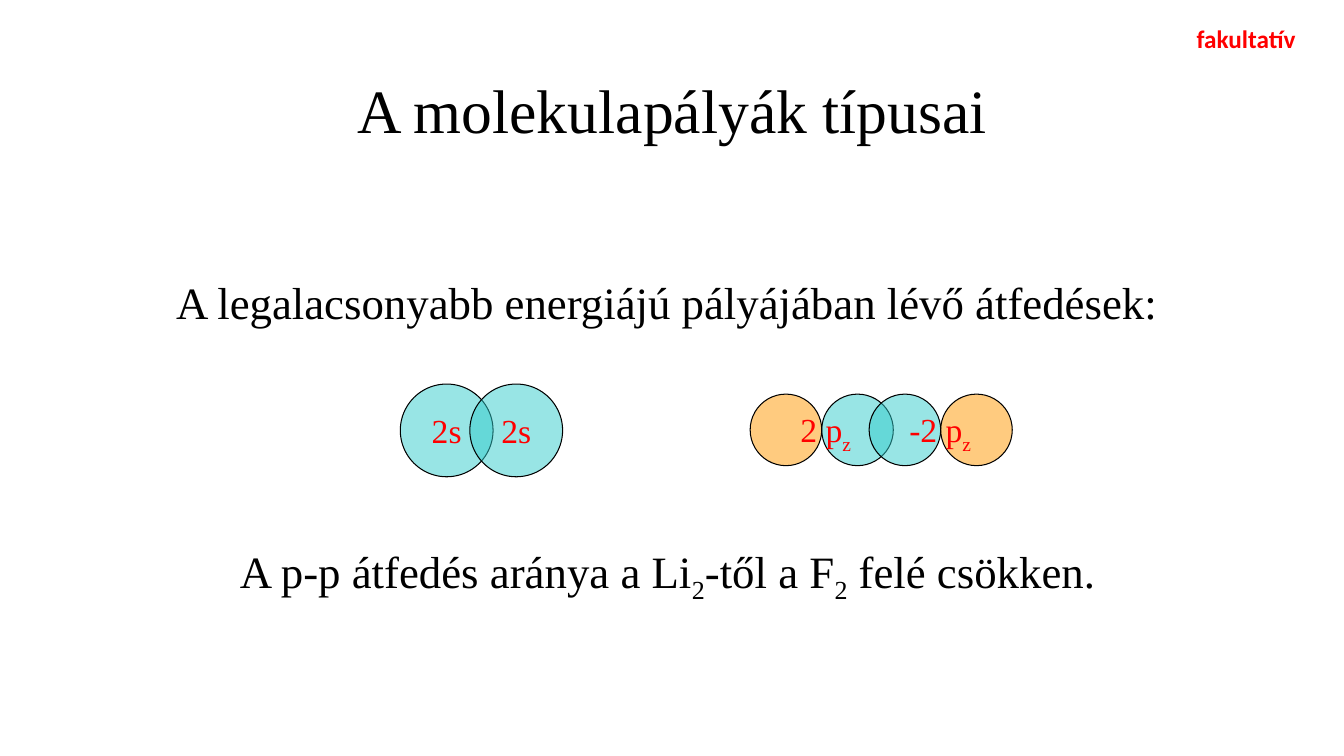
from lxml import etree
from pptx import Presentation
from pptx.dml.color import RGBColor
from pptx.enum.shapes import MSO_SHAPE as Shape
from pptx.enum.text import MSO_ANCHOR as Anchor, PP_ALIGN as Align
from pptx.oxml.ns import qn
from pptx.util import Inches, Pt

COLORS = {"text": "000000", "accent": "FF0000", "plus": "33CCCC", "minus": "FF9900"}
SERIF = "Times New Roman"
S_DIAMETER, S_STEP = 0.92, 0.69
P_DIAMETER, P_STEP = 0.71, 0.47


def color(name):
    return RGBColor.from_string(COLORS[name])


def write(frame, runs, size, ink="text", font=SERIF, bold=None, align=Align.LEFT):
    """Fill a frame; every second run is a subscript."""
    paragraph = frame.paragraphs[0]
    paragraph.alignment = align
    paragraph.font.size = Pt(size)
    paragraph.font.name = font
    paragraph.font.bold = bold
    paragraph.font.color.rgb = color(ink)
    for index, text in enumerate(runs):
        run = paragraph.add_run()
        run.text = text
        if index % 2:
            run.font._element.set("baseline", "-25000")
    return paragraph


def add_label(shapes, box, runs, size, **style):
    frame = shapes.add_textbox(*map(Inches, box)).text_frame
    frame.word_wrap = False
    write(frame, runs, size, **style)


def add_lobe(shapes, left, top, diameter, fill):
    """Half-transparent circle with a thin outline."""
    lobe = shapes.add_shape(Shape.OVAL, *map(Inches, (left, top, diameter, diameter)))
    lobe.shadow.inherit = False
    lobe.fill.solid()
    lobe.fill.fore_color.rgb = color(fill)
    fill_color = lobe._element.spPr.find(qn("a:solidFill"))[0]
    etree.SubElement(fill_color, qn("a:alpha")).set("val", "50000")
    lobe.line.color.rgb = color("text")
    lobe.line.width = Pt(0.75)
    return lobe


def add_title(slide, box):
    frame = slide.shapes.add_textbox(*map(Inches, box)).text_frame
    frame.word_wrap = True
    frame.vertical_anchor = Anchor.MIDDLE
    paragraph = write(frame, ["A molekulapályák típusai"], 44, align=Align.CENTER)
    paragraph.line_spacing = 0.9


def add_s_overlap(slide, left, top):
    for column in range(2):
        lobe = add_lobe(slide.shapes, left + column * S_STEP, top, S_DIAMETER, "plus")
        frame = lobe.text_frame
        frame.word_wrap = False
        frame.vertical_anchor = Anchor.MIDDLE
        write(frame, ["2s"], 24, ink="accent", align=Align.CENTER)


def add_p_overlap(slide, left, top):
    """Two mirrored p orbitals whose plus lobes overlap."""
    inner = left + P_DIAMETER
    orbitals = [
        (inner, left, 0.4, 0.72, "2 p"),
        (inner + P_STEP, inner + P_STEP + P_DIAMETER, 1.48, 0.84, "-2 p"),
    ]
    for plus_left, minus_left, label_offset, label_width, name in orbitals:
        shapes = slide.shapes.add_group_shape().shapes
        add_lobe(shapes, plus_left, top, P_DIAMETER, "plus")
        add_lobe(shapes, minus_left, top, P_DIAMETER, "minus")
        label_box = (left + label_offset, top + 0.1, label_width, 0.51)
        add_label(shapes, label_box, [name, "z"], 24, ink="accent")


def main():
    presentation = Presentation()
    presentation.slide_width, presentation.slide_height = Inches(13.33), Inches(7.5)
    slide = presentation.slides.add_slide(presentation.slide_layouts[6])

    # Heading
    add_title(slide, (0.92, 0.4, 11.5, 1.45))

    # Overlap diagrams between the two statements
    add_s_overlap(slide, 3.97, 3.81)
    add_label(slide.shapes, (1.65, 2.68, 10.04, 0.64),
              ["A legalacsonyabb energiájú pályájában lévő átfedések:"], 32)
    add_label(slide.shapes, (2.28, 5.34, 8.8, 0.64),
              ["A p-p átfedés aránya a Li", "2", "-től a F", "2", " felé csökken."], 32)
    add_p_overlap(slide, 7.44, 3.91)

    # Corner tag
    add_label(slide.shapes, (11.77, 0.18, 1.19, 0.4), ["fakultatív"], 18,
              ink="accent", font="Calibri", bold=True)

    presentation.save("out.pptx")


if __name__ == "__main__":
    main()
